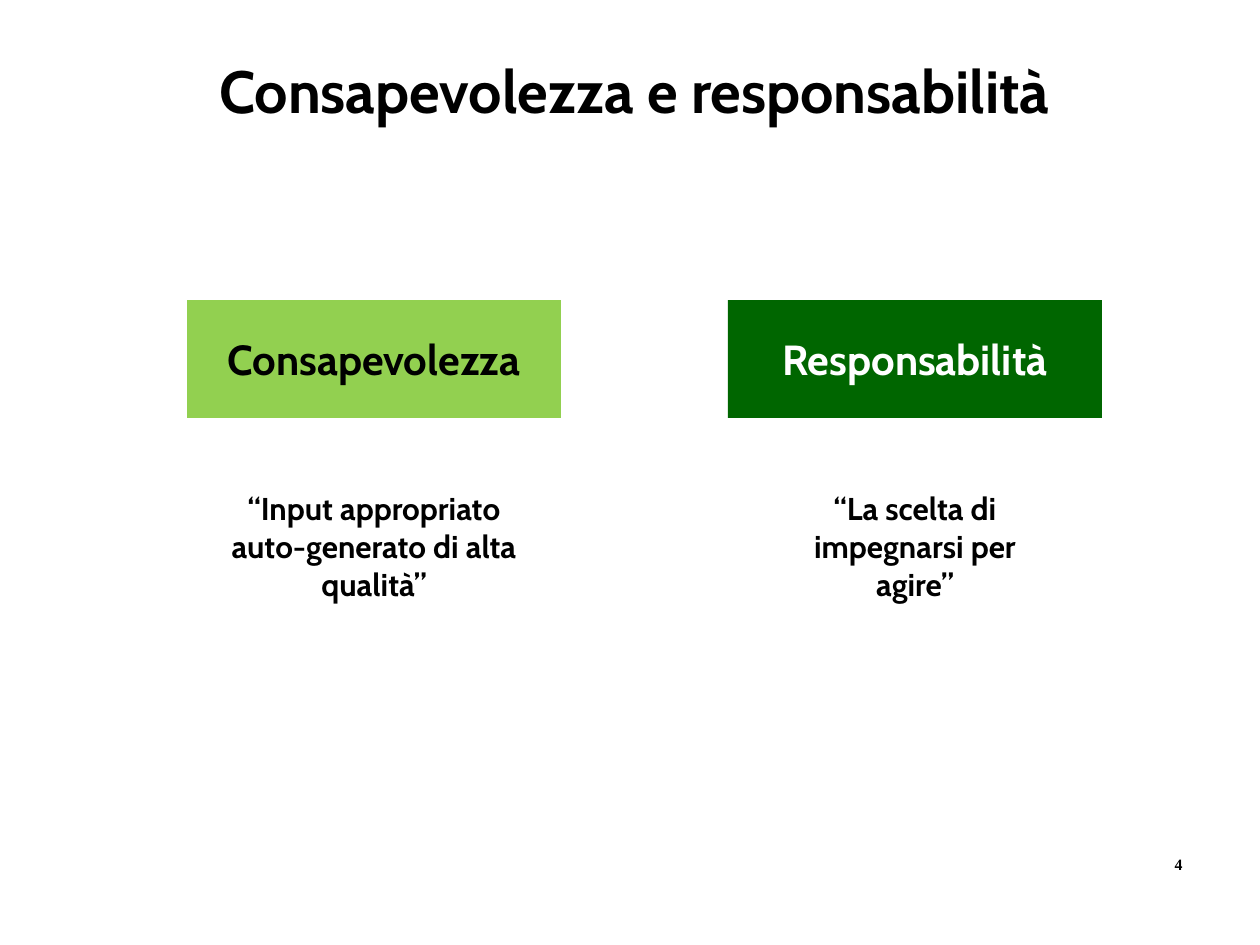
from dataclasses import dataclass

from pptx import Presentation
from pptx import util as u
from pptx.dml.color import RGBColor
from pptx.enum import shapes, text

PX = u.Inches(1) // 126

TITLE = "Consapevolezza e responsabilità"
PAGE = "4"
# heading, fill, heading colour, quote, quote width
COLUMNS = [
    ("Consapevolezza", "92D050", "000000",
     "“Input appropriato auto-generato di alta qualità”", 344),
    ("Responsabilità", "006600", "FFFFFF",
     "“La scelta di impegnarsi per agire”", 286),
]


@dataclass(frozen=True)
class Theme:
    font: str = "Cabin"
    page_font: str = "Times New Roman"
    ink: str = "000000"
    title: int = 34
    head: int = 24
    quote: int = 18
    page: int = 9


THEME = Theme()
LEFT, STEP, BOX_W = 187, 541, 374
BOX_TOP, BOX_H = 300, 118
QUOTE_TOP, QUOTE_H = 483, 127


def scale(*sizes):
    return [size * PX for size in sizes]


def write(shape, words, size, color=THEME.ink, font=THEME.font,
          anchor=text.MSO_ANCHOR.TOP, wrap=True):
    frame = shape.text_frame
    frame.word_wrap = wrap
    frame.auto_size = text.MSO_AUTO_SIZE.NONE
    frame.vertical_anchor = anchor
    para = frame.paragraphs[0]
    para.alignment = text.PP_ALIGN.CENTER
    run = para.add_run()
    run.text = words
    run.font.name = font
    run.font.size = u.Pt(size)
    run.font.bold = True
    run.font.color.rgb = RGBColor.from_string(color)


def add_box(slide, left, fill):
    box = slide.shapes.add_shape(shapes.MSO_SHAPE.RECTANGLE,
                                 *scale(left, BOX_TOP, BOX_W, BOX_H))
    box.shadow.inherit = False
    box.fill.solid()
    box.fill.fore_color.rgb = RGBColor.from_string(fill)
    box.line.fill.background()
    return box


def main():
    deck = Presentation()
    deck.slide_width, deck.slide_height = scale(1260, 945)
    slide = deck.slides.add_slide(deck.slide_layouts[5])

    title = slide.shapes.title
    title.left, title.top, title.width, title.height = scale(29, 48, 1211, 103)
    write(title, TITLE, THEME.title)

    for i, (head, fill, color, quote, width) in enumerate(COLUMNS):
        left = LEFT + i * STEP
        write(add_box(slide, left, fill), head, THEME.head, color,
              anchor=text.MSO_ANCHOR.MIDDLE)
        inset = (BOX_W - width) // 2
        note = slide.shapes.add_textbox(
            *scale(left + inset, QUOTE_TOP, width, QUOTE_H))
        write(note, quote, THEME.quote)

    page = slide.shapes.add_textbox(*scale(1155, 849, 47, 31))
    write(page, PAGE, THEME.page, font=THEME.page_font, wrap=False)
    deck.save("out.pptx")


if __name__ == "__main__":
    main()
